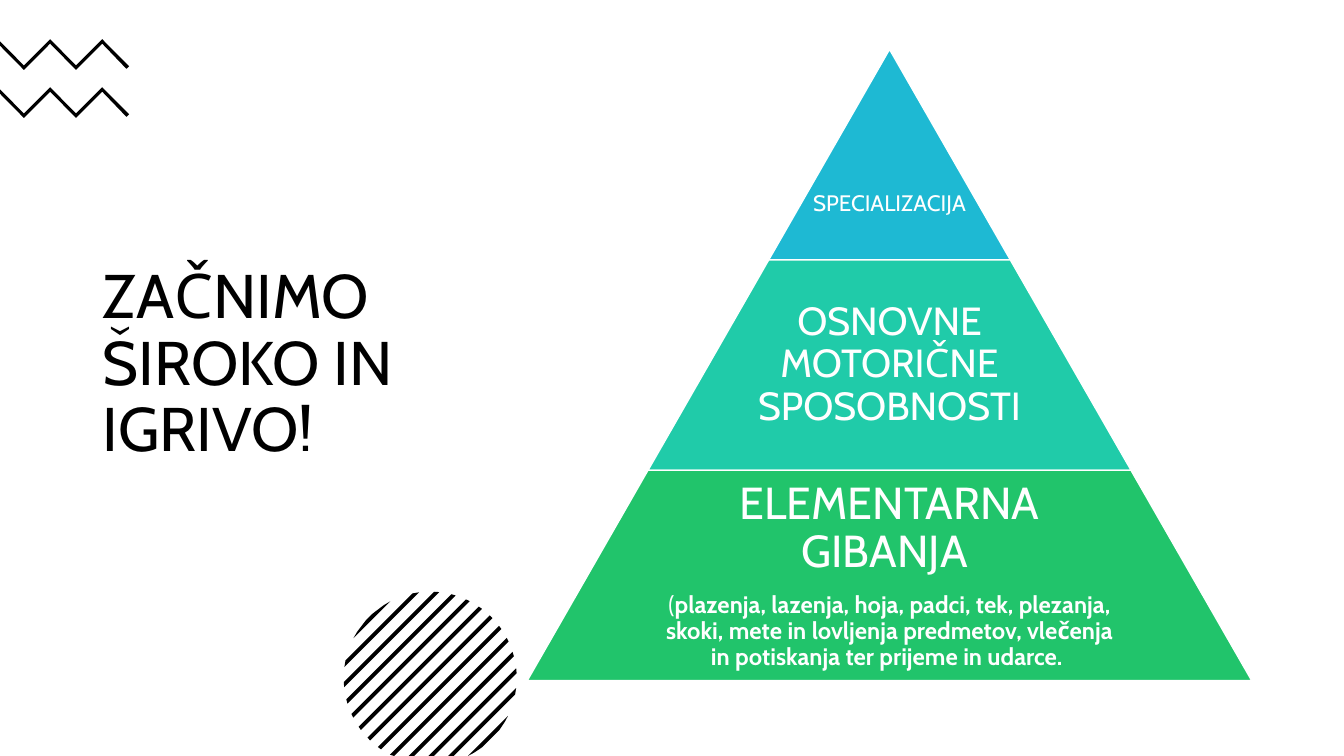
from math import sqrt

from pptx import Presentation
from pptx.dml.color import RGBColor
from pptx.enum.shapes import MSO_SHAPE
from pptx.enum.text import MSO_ANCHOR, MSO_AUTO_SIZE, PP_ALIGN
from pptx.util import Pt

BLACK = RGBColor(0x00, 0x00, 0x00)
WHITE = RGBColor(0xFF, 0xFF, 0xFF)
BLUE = RGBColor(0x1E, 0xB9, 0xD3)
TEAL = RGBColor(0x20, 0xCB, 0xA9)
GREEN = RGBColor(0x21, 0xC4, 0x6B)
FONT = "Cabin"

# Content: every paragraph is (size, space after, [(text, bold), ...])
TITLE = "ZAČNIMO ŠIROKO IN IGRIVO!"
TIERS = [
    {"fill": BLUE, "text_width": 172.6, "inset": 1.6, "top_inset": 71.9,
     "paragraphs": [(16, 0, [("SPECIALIZACIJA", False)])]},
    {"fill": TEAL, "text_width": 224, "inset": 2.8, "top_inset": 2.8,
     "paragraphs": [(28, 0, [("OSNOVNE MOTORIČNE SPOSOBNOSTI", False)])]},
    {"fill": GREEN, "text_width": 336.4, "inset": 2.8, "top_inset": 2.8,
     "paragraphs": [
         (32, 11.2, [("ELEMENTARNA GIBANJA ", False)]),
         (17, 0, [("(", False),
                  ("plazenja, lazenja, hoja, padci, tek, plezanja, skoki, "
                   "mete in lovljenja predmetov, vlečenja in potiskanja "
                   "ter prijeme in udarce. ", True)])]},
]

# Geometry in points
SLIDE_WIDTH, SLIDE_HEIGHT = 960, 540
PYRAMID_CENTER, PYRAMID_TOP = 635.4, 35.3
TIER_HEIGHT, TIER_STEP = 150.3, 172.5
DISC_X, DISC_Y, DISC_RADIUS = 307.3, 484.4, 61.8
STRIPE_COUNT, STRIPE_START, STRIPE_PITCH, STRIPE_WIDTH = 13, 704.4, 14.16, 3.95
ZIGZAG_TOPS = (28, 62.3)
ZIGZAG = [(35.8, 0), (54.3, 18.8), (73, 0), (92.2, 19.4), (90.3, 21.2),
          (73, 3.2), (54.3, 22), (35.8, 3.2), (17.1, 22), (0, 4.7),
          (0, 1.6), (17.1, 18.8)]


def add_outline(slide, points):
    corners = [(Pt(x), Pt(y)) for x, y in points]
    builder = slide.shapes.build_freeform(*corners[0])
    builder.add_line_segments(corners[1:], close=True)
    shape = builder.convert_to_shape()
    shape.shadow.inherit = False
    shape.fill.solid()
    shape.fill.fore_color.rgb = BLACK
    shape.line.fill.background()


def add_run(paragraph, text, size, color, bold=False):
    run = paragraph.add_run()
    run.text = text
    run.font.name = FONT
    run.font.size = Pt(size)
    run.font.bold = bold
    run.font.color.rgb = color


def add_backdrop(slide):
    backdrop = slide.shapes.add_shape(
        MSO_SHAPE.RECTANGLE, Pt(0), Pt(0), Pt(SLIDE_WIDTH), Pt(SLIDE_HEIGHT))
    backdrop.shadow.inherit = False
    backdrop.fill.solid()
    backdrop.fill.fore_color.rgb = WHITE
    backdrop.line.fill.background()


def disc_ends(diagonal):
    """Both ends of the chord x + y = diagonal, cut at the slide's bottom."""
    distance = (diagonal - DISC_X - DISC_Y) / sqrt(2)
    half = sqrt(max(0, DISC_RADIUS ** 2 - distance ** 2))
    upper_y = DISC_Y + (distance - half) / sqrt(2)
    lower_y = min(DISC_Y + (distance + half) / sqrt(2), SLIDE_HEIGHT)
    return (diagonal - upper_y, upper_y), (diagonal - lower_y, lower_y)


def add_striped_disc(slide):
    for index in range(STRIPE_COUNT):
        start = STRIPE_START + index * STRIPE_PITCH
        # The outermost stripes are rounder and need one more chord
        outermost = index in (0, STRIPE_COUNT - 1)
        fractions = (0, 0.5, 1) if outermost else (0, 1)
        chords = [disc_ends(start + STRIPE_WIDTH * fraction)
                  for fraction in fractions]
        upper = [chord[0] for chord in chords]
        lower = [chord[1] for chord in reversed(chords)]
        add_outline(slide, upper + lower)


def add_title(slide):
    title = slide.shapes.title
    title.left, title.top, title.width, title.height = (
        Pt(66), Pt(94.3), Pt(252), Pt(333.4))
    frame = title.text_frame
    frame.word_wrap = True
    frame.auto_size = MSO_AUTO_SIZE.NONE
    frame.vertical_anchor = MSO_ANCHOR.MIDDLE
    paragraph = frame.paragraphs[0]
    paragraph.alignment = PP_ALIGN.LEFT
    paragraph.line_spacing = 0.9
    add_run(paragraph, TITLE, 44, BLACK)
    # Bring the title in front of the backdrop
    slide.shapes.element.append(title.element)


def add_tier(slide, index, tier):
    top = PYRAMID_TOP + index * TIER_HEIGHT
    width = TIER_STEP * (index + 1)
    shape = slide.shapes.add_shape(
        MSO_SHAPE.TRAPEZOID, Pt(PYRAMID_CENTER - width / 2), Pt(top),
        Pt(width), Pt(TIER_HEIGHT))
    shape.adjustments[0] = TIER_STEP / 2 / TIER_HEIGHT
    shape.shadow.inherit = False
    shape.fill.solid()
    shape.fill.fore_color.rgb = tier["fill"]
    shape.line.color.rgb = WHITE
    shape.line.width = Pt(1)

    # Label
    text_width = tier["text_width"]
    label = slide.shapes.add_textbox(
        Pt(PYRAMID_CENTER - text_width / 2), Pt(top),
        Pt(text_width), Pt(TIER_HEIGHT))
    frame = label.text_frame
    frame.word_wrap = True
    frame.vertical_anchor = MSO_ANCHOR.MIDDLE
    frame.margin_left = frame.margin_right = frame.margin_bottom = Pt(tier["inset"])
    frame.margin_top = Pt(tier["top_inset"])
    for number, (size, space_after, runs) in enumerate(tier["paragraphs"]):
        paragraph = frame.add_paragraph() if number else frame.paragraphs[0]
        paragraph.alignment = PP_ALIGN.CENTER
        paragraph.line_spacing = 0.9
        paragraph.space_after = Pt(space_after)
        for text, bold in runs:
            add_run(paragraph, text, size, WHITE, bold)


def main():
    presentation = Presentation()
    presentation.slide_width = Pt(SLIDE_WIDTH)
    presentation.slide_height = Pt(SLIDE_HEIGHT)
    slide = presentation.slides.add_slide(presentation.slide_layouts[5])

    # Backdrop and decoration
    add_backdrop(slide)
    add_striped_disc(slide)

    # Title
    add_title(slide)

    # Zigzags
    for top in ZIGZAG_TOPS:
        add_outline(slide, [(x, top + y) for x, y in ZIGZAG])

    # Pyramid
    for index, tier in enumerate(TIERS):
        add_tier(slide, index, tier)

    presentation.save("out.pptx")


if __name__ == "__main__":
    main()
